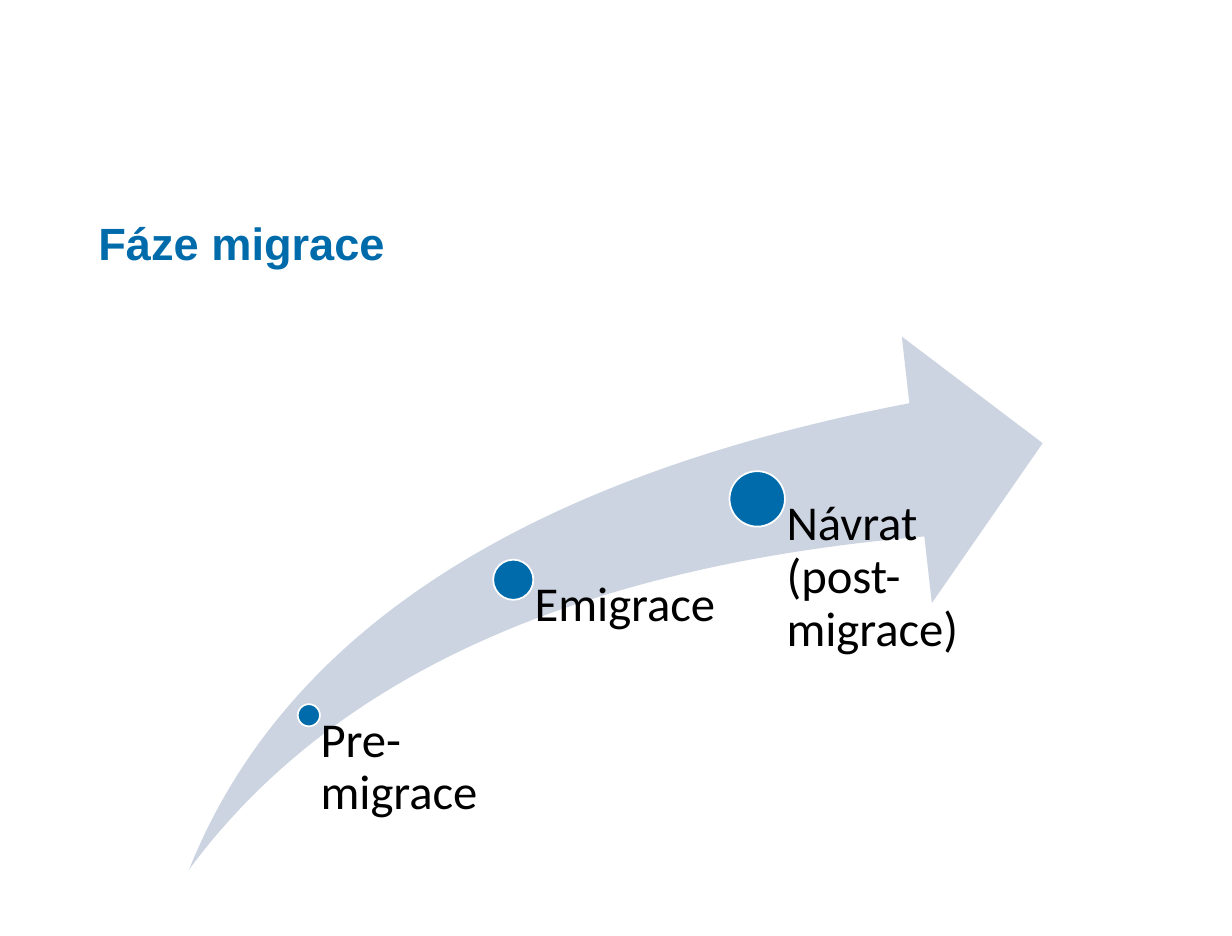
"""Build the slide on the phases of migration, with lengths in percent of the page."""
from dataclasses import dataclass

from pptx import Presentation
from pptx.dml.color import RGBColor
from pptx.enum.shapes import MSO_SHAPE
from pptx.enum.text import MSO_ANCHOR, MSO_AUTO_SIZE, PP_ALIGN
from pptx.shapes.autoshape import Shape
from pptx.slide import Slide
from pptx.text.text import TextFrame
from pptx.util import Cm, Pt

ELLIPSE = MSO_SHAPE.OVAL
SWOOSH = MSO_SHAPE.SWOOSH_ARROW
TOP = MSO_ANCHOR.TOP
LEFT = PP_ALIGN.LEFT
NO_AUTOFIT = MSO_AUTO_SIZE.NONE
TITLE_ONLY = 5

PAGE_WIDTH = Cm(25)
PAGE_HEIGHT = Cm(19)
COLOURS = {"blue": "006BAB", "pale": "CCD4E2", "white": "FFFFFF", "black": "000000"}
TITLE_FORMAT = {"name": "Arial", "size": Pt(26), "bold": True}
LABEL_FORMAT = {"name": "Calibri", "size": Pt(28), "bold": False}


@dataclass(frozen=True)
class Area:
    """Rectangle in percent of the page's width and height."""

    left: float
    top: float
    width: float
    height: float


@dataclass(frozen=True)
class Phase:
    """Stage on the arrow, placed by the centre of its dot."""

    name: str
    centre_x: float
    centre_y: float
    diameter: float
    label_width: float
    label_inset: float


TITLE_AREA = Area(7.98, 23.66, 84.04, 10.96)
ARROW_AREA = Area(15.34, 35.96, 69.29, 56.95)
PHASES = (
    Phase("Pre-migrace", 25.07, 76.42, 1.8, 16.15, 0.95),
    Phase("Emigrace", 41.66, 61.94, 3.26, 16.66, 1.73),
    Phase("Návrat (post-migrace)", 61.46, 53.3, 4.5, 16.66, 2.38),
)


def across(percent: float) -> int:
    """Convert a share of the page's width to a length."""
    return round(PAGE_WIDTH * percent / 100)


def down(percent: float) -> int:
    """Convert a share of the page's height to a length."""
    return round(PAGE_HEIGHT * percent / 100)


def bounds(area: Area) -> tuple[int, int, int, int]:
    """Return left, top, width and height as lengths."""
    return across(area.left), down(area.top), across(area.width), down(area.height)


def colour(name: str) -> RGBColor:
    """Look up a named colour."""
    return RGBColor.from_string(COLOURS[name])


def write(frame: TextFrame, text: str, formats: dict, ink: str, inset: int = 0) -> None:
    """Fill a text frame with one formatted, left-aligned paragraph."""
    settings = {
        "word_wrap": True, "auto_size": NO_AUTOFIT, "vertical_anchor": TOP,
        "margin_left": inset, "margin_top": 0, "margin_right": 0, "margin_bottom": 0,
    }
    for key, value in settings.items():
        setattr(frame, key, value)
    para = frame.paragraphs[0]
    para.alignment = LEFT
    para.line_spacing = 0.9
    span = para.add_run()
    span.text = text
    for key, value in formats.items():
        setattr(span.font, key, value)
    span.font.color.rgb = colour(ink)


def add_title(page: Slide, text: str) -> None:
    """Place and format the title placeholder."""
    title = page.shapes.title
    title.left, title.top, title.width, title.height = bounds(TITLE_AREA)
    write(title.text_frame, text, TITLE_FORMAT, "blue")


def add_filled(page: Slide, kind: MSO_SHAPE, place: tuple[int, int, int, int], fill: str) -> Shape:
    """Add a flat shape without an outline."""
    shape = page.shapes.add_shape(kind, *place)
    shape.shadow.inherit = False
    shape.fill.solid()
    shape.fill.fore_color.rgb = colour(fill)
    shape.line.fill.background()
    return shape


def add_arrow(page: Slide) -> None:
    """Draw the rising arrow."""
    arrow = add_filled(page, SWOOSH, bounds(ARROW_AREA), "pale")
    for index in range(2):
        arrow.adjustments[index] = 0.25


def add_phase(page: Slide, phase: Phase) -> None:
    """Draw a dot and its label, which reaches down to the arrow's foot."""
    size = across(phase.diameter)
    radius = size // 2
    corner = across(phase.centre_x) - radius, down(phase.centre_y) - radius
    dot = add_filled(page, ELLIPSE, (*corner, size, size), "blue")
    dot.line.color.rgb = colour("white")
    dot.line.width = Pt(1)
    foot = ARROW_AREA.top + ARROW_AREA.height
    area = Area(phase.centre_x, phase.centre_y, phase.label_width, foot - phase.centre_y)
    label = page.shapes.add_textbox(*bounds(area))
    write(label.text_frame, phase.name, LABEL_FORMAT, "black", across(phase.label_inset))


def main() -> None:
    """Build and save the deck."""
    deck = Presentation()
    deck.slide_width = PAGE_WIDTH
    deck.slide_height = PAGE_HEIGHT
    page = deck.slides.add_slide(deck.slide_layouts[TITLE_ONLY])
    add_title(page, "Fáze migrace")
    add_arrow(page)
    for phase in PHASES:
        add_phase(page, phase)
    deck.save("out.pptx")


if __name__ == "__main__":
    main()
